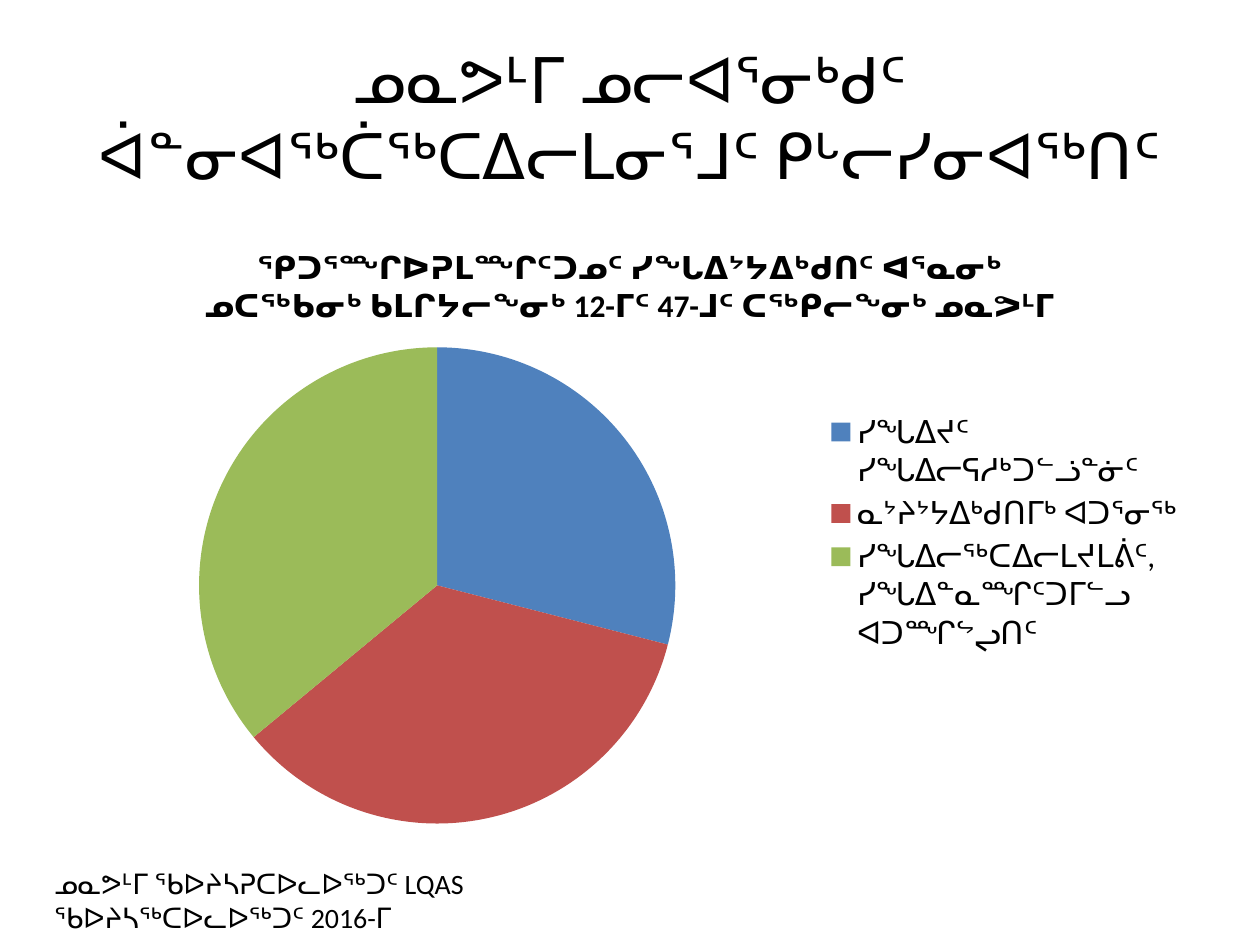
from dataclasses import dataclass

from lxml import etree
from pptx import Presentation
from pptx.chart.data import CategoryChartData
from pptx.dml.color import RGBColor
from pptx.enum.chart import XL_CHART_TYPE, XL_LEGEND_POSITION
from pptx.enum.text import MSO_ANCHOR, PP_ALIGN
from pptx.oxml.ns import qn
from pptx.util import Cm, Pt

PIE = XL_CHART_TYPE.PIE
LEGEND_RIGHT = XL_LEGEND_POSITION.RIGHT
MIDDLE = MSO_ANCHOR.MIDDLE
CENTER = PP_ALIGN.CENTER


@dataclass(frozen=True)
class Theme:
    font: str = "Calibri"
    text: RGBColor = RGBColor(0, 0, 0)
    slices: tuple = ("4F81BD", "C0504D", "9BBB59")
    title_size: Pt = Pt(36)
    chart_size: Pt = Pt(18)
    source_size: Pt = Pt(16)


theme = Theme()


def style(font, size, bold=False):
    font.name = theme.font
    font.size = size
    font.bold = bold
    font.color.rgb = theme.text


def chart_layout(target, x, y, w, h):
    for old in target.findall(qn("c:layout")):
        target.remove(old)
    layout = etree.Element(qn("c:layout"))
    manual = etree.SubElement(layout, qn("c:manualLayout"))
    settings = {"xMode": "edge", "yMode": "edge", "x": x, "y": y, "w": w, "h": h}
    if target.tag == qn("c:plotArea"):
        settings = {"layoutTarget": "inner", **settings}
    for name, value in settings.items():
        etree.SubElement(manual, qn(f"c:{name}")).set("val", str(value))
    position = target.find(qn("c:legendPos"))
    if position is None:
        target.insert(0, layout)
    else:
        position.addnext(layout)


deck = Presentation()
deck.slide_width = Cm(25.4)
deck.slide_height = Cm(19.05)
page = deck.slides.add_slide(deck.slide_layouts[5])

title = page.shapes.title
title.left, title.top, title.width, title.height = Cm(1.27), Cm(0.76), Cm(22.86), Cm(3.18)
title.text_frame.text = "ᓄᓇᕗᒻᒥ ᓄᓕᐊᕐᓂᒃᑯᑦ ᐋᓐᓂᐊᖅᑖᖅᑕᐃᓕᒪᓂᕐᒧᑦ ᑭᒡᓕᓯᓂᐊᖅᑎᑦ"
title.text_frame.vertical_anchor = MIDDLE
title.text_frame.paragraphs[0].alignment = CENTER
style(title.text_frame.paragraphs[0].runs[0].font, theme.title_size)

shares = CategoryChartData()
shares.categories = [
    "ᓯᖓᐃᔪᑦ ᓯᖓᐃᓕᕋᓱᒃᑐᓪᓘᓐᓃᑦ",
    "ᓇᔾᔨᔾᔭᐃᒃᑯᑎᒥᒃ ᐊᑐᕐᓂᖅ",
    "ᓯᖓᐃᓕᖅᑕᐃᓕᒪᔪᒪᕖᑦ, ᓯᖓᐃᓐᓇᙱᑦᑐᒥᓪᓗ ᐊᑐᙱᖦᖢᑎᑦ",
]
shares.add_series("Series 1", [29, 35, 36])
chart = page.shapes.add_chart(
    PIE, Cm(1.27), Cm(4.45), Cm(22.86), Cm(12.57), shares
).chart
style(chart.font, theme.chart_size)

chart.has_title = True
heading = chart.chart_title.text_frame
heading.text = (
    "ᕿᑐᕐᙱᐅᕈᒪᙱᑦᑐᓄᑦ ᓯᖓᐃᔾᔭᐃᒃᑯᑎᑦ ᐊᕐᓇᓂᒃ ᓄᑕᖅᑲᓂᒃ ᑲᒪᒋᔭᓕᖕᓂᒃ "
    "12-ᒥᑦ 47-ᒧᑦ ᑕᖅᑭᓕᖕᓂᒃ ᓄᓇᕗᒻᒥ"
)
style(heading.paragraphs[0].runs[0].font, theme.chart_size, bold=True)
chart.chart_title.include_in_layout = False

chart.has_legend = True
chart.legend.position = LEGEND_RIGHT
chart.legend.include_in_layout = False
style(chart.legend.font, theme.chart_size)

plot = chart.plots[0]
plot.vary_by_categories = True
for index, color in enumerate(theme.slices):
    fill = plot.series[0].points[index].format.fill
    fill.solid()
    fill.fore_color.rgb = RGBColor.from_string(color)

chart_layout(chart.element.find(".//" + qn("c:plotArea")), 0.12, 0.2, 0.42, 0.77)
chart_layout(chart.element.find(".//" + qn("c:legend")), 0.67, 0.3, 0.32, 0.4)

source = page.shapes.add_textbox(Cm(0.84), Cm(17.35), Cm(10.36), Cm(1.63))
source.text_frame.word_wrap = True
source.text_frame.text = "ᓄᓇᕗᒻᒥ ᖃᐅᔨᓴᕈᑕᐅᓚᐅᖅᑐᑦ LQAS ᖃᐅᔨᓴᖅᑕᐅᓚᐅᖅᑐᑦ 2016-ᒥ"
style(source.text_frame.paragraphs[0].runs[0].font, theme.source_size)

deck.save("out.pptx")
